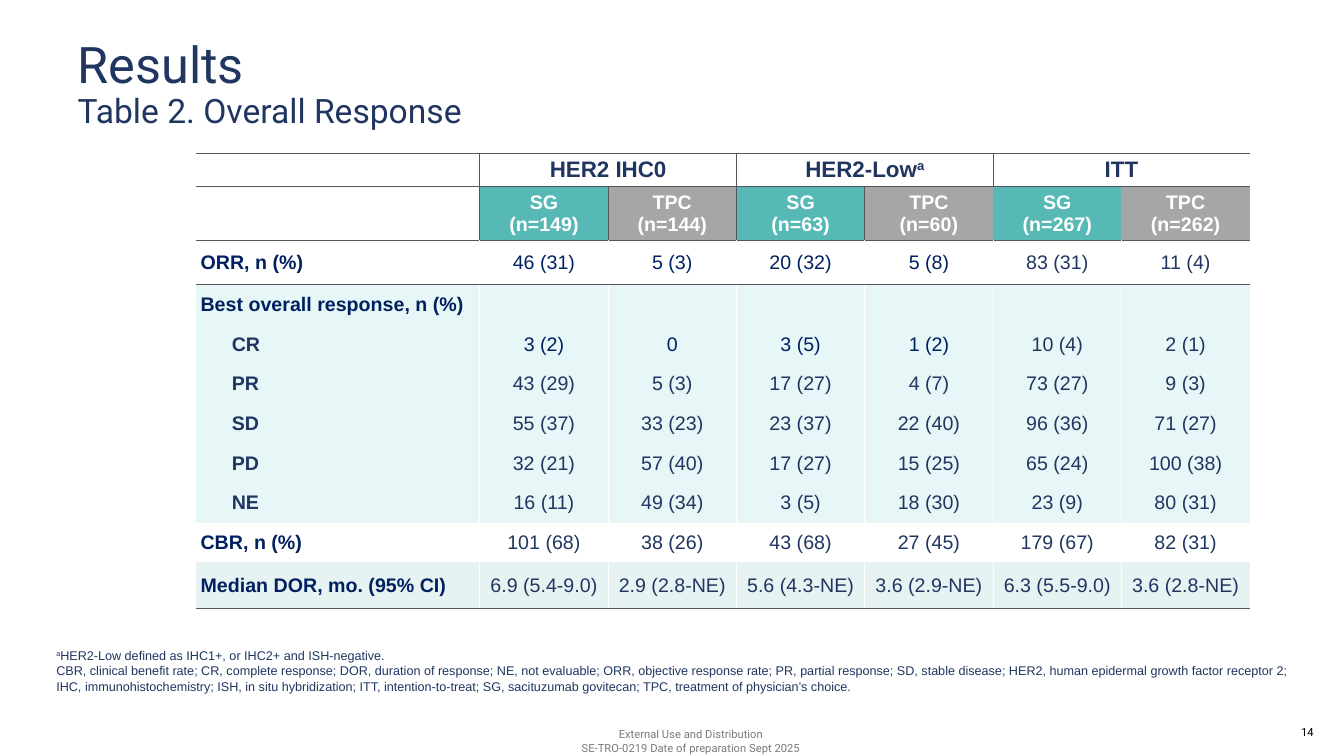
from pptx import Presentation
from pptx.dml.color import RGBColor
from pptx.enum.text import MSO_ANCHOR, MSO_AUTO_SIZE, PP_ALIGN
from pptx.oxml import parse_xml
from pptx.oxml.ns import nsdecls, qn
from pptx.util import Inches, Pt

SLIDE_WIDTH, SLIDE_HEIGHT = Inches(13.33), Inches(7.5)
NAVY, DEEP_BLUE, WHITE, RULE_GREY = "203661", "002060", "FFFFFF", "54565B"
TEAL, GREY, MINT, PALE_TEAL = "57B9B5", "A6A6A6", "E7F6F6", "E7F3F3"
PLAIN_TABLE_STYLE = "{2D5ABB26-0587-4C30-8999-92F81FD0307C}"

GROUPS = ["HER2 IHC0", "HER2-Low^a", "ITT"]
ARM_SIZES = [149, 144, 63, 60, 267, 262]
LABEL_COLUMN, VALUE_COLUMN = 21.15, 9.55
GROUP_ROW, ARM_ROW = 4.4, 7.2

# label, row height, fill, is a subrow, colour of the first four values, values
RESPONSES = [
    ("ORR, n (%)", 5.8, WHITE, False, DEEP_BLUE,
     ["46 (31)", "5 (3)", "20 (32)", "5 (8)", "83 (31)", "11 (4)"]),
    ("Best overall response, n (%)", 5.25, MINT, False, NAVY, [""] * 6),
    ("CR", 5.25, MINT, True, DEEP_BLUE,
     ["3 (2)", "0", "3 (5)", "1 (2)", "10 (4)", "2 (1)"]),
    ("PR", 5.25, MINT, True, NAVY,
     ["43 (29)", "5 (3)", "17 (27)", "4 (7)", "73 (27)", "9 (3)"]),
    ("SD", 5.25, MINT, True, NAVY,
     ["55 (37)", "33 (23)", "23 (37)", "22 (40)", "96 (36)", "71 (27)"]),
    ("PD", 5.25, MINT, True, NAVY,
     ["32 (21)", "57 (40)", "17 (27)", "15 (25)", "65 (24)", "100 (38)"]),
    ("NE", 5.25, MINT, True, NAVY,
     ["16 (11)", "49 (34)", "3 (5)", "18 (30)", "23 (9)", "80 (31)"]),
    ("CBR, n (%)", 5.25, WHITE, False, NAVY,
     ["101 (68)", "38 (26)", "43 (68)", "27 (45)", "179 (67)", "82 (31)"]),
    ("Median DOR, mo. (95% CI)", 6.1, PALE_TEAL, False, NAVY,
     ["6.9 (5.4-9.0)", "2.9 (2.8-NE)", "5.6 (4.3-NE)", "3.6 (2.9-NE)",
      "6.3 (5.5-9.0)", "3.6 (2.8-NE)"]),
]

FOOTNOTES = [
    "^aHER2-Low defined as IHC1+, or IHC2+ and ISH-negative.",
    "CBR, clinical benefit rate; CR, complete response; DOR, duration of response; "
    "NE, not evaluable; ORR, objective response rate; PR, partial response; "
    "SD, stable disease; HER2, human epidermal growth factor receptor 2; "
    "IHC, immunohistochemistry; ISH, in situ hybridization; ITT, intention-to-treat; "
    "SG, sacituzumab govitecan; TPC, treatment of physician’s choice.",
]


def across(percent):
    """Return a share of the slide width."""
    return round(SLIDE_WIDTH * percent / 100)


def down(percent):
    """Return a share of the slide height."""
    return round(SLIDE_HEIGHT * percent / 100)


def box(left, top, width, height):
    """Return a position and size from shares of the slide."""
    return across(left), down(top), across(width), down(height)


def hex_colour(value):
    """Turn a hex string into a colour."""
    return RGBColor.from_string(value)


def apply_format(target, values):
    """Set each named attribute of the target."""
    for name, value in values.items():
        setattr(target, name, value)


def add_run(paragraph, text, colour, **values):
    """Add one formatted run to a paragraph."""
    run = paragraph.add_run()
    run.text = text
    apply_format(run.font, values)
    run.font.color.rgb = hex_colour(colour)
    return run


def write_text(paragraph, text, colour, **values):
    """Write text in which a caret raises the next letter and a newline breaks the line."""
    for number, line in enumerate(text.split("\n")):
        if number:
            paragraph.add_line_break()
        before, caret, after = line.partition("^")
        if before:
            add_run(paragraph, before, colour, **values)
        if caret:
            raised = add_run(paragraph, after[0], colour, **values)
            raised.font._element.set("baseline", "30000")
            if after[1:]:
                add_run(paragraph, after[1:], colour, **values)


def add_text_box(slide, place, lines, colour, alignment, anchor, **values):
    """Add a wrapped text box with one paragraph for each line."""
    frame = slide.shapes.add_textbox(*place).text_frame
    apply_format(frame, {"word_wrap": True, "vertical_anchor": anchor})
    for number, line in enumerate(lines):
        paragraph = frame.add_paragraph() if number else frame.paragraphs[0]
        paragraph.alignment = alignment
        write_text(paragraph, line, colour, **values)


def add_title(slide):
    """Place and fill the title."""
    title = slide.shapes.title
    place = zip(("left", "top", "width", "height"), box(5.03, 2, 89.63, 16))
    apply_format(title, dict(place))
    apply_format(title.text_frame, {"word_wrap": True, "auto_size": MSO_AUTO_SIZE.NONE,
                                    "vertical_anchor": MSO_ANCHOR.BOTTOM})
    paragraph = title.text_frame.paragraphs[0]
    apply_format(paragraph, {"alignment": PP_ALIGN.LEFT, "line_spacing": 0.9})
    add_run(paragraph, "Results", NAVY, name="Roboto", size=Pt(36))
    paragraph.add_line_break()
    add_run(paragraph, "Table 2. Overall Response", NAVY, name="Roboto", size=Pt(24))


def style_cell(cell, fill, borders):
    """Set the margins, borders and fill of a cell."""
    apply_format(cell, {"margin_left": Inches(0.05), "margin_right": Inches(0.05),
                        "margin_top": 0, "margin_bottom": 0,
                        "vertical_anchor": MSO_ANCHOR.MIDDLE})
    properties = cell._tc.get_or_add_tcPr()
    for side in "LRTB":
        if side in borders:
            properties.append(parse_xml(
                f'<a:ln{side} {nsdecls("a")} w="12700"><a:solidFill>'
                f'<a:srgbClr val="{borders[side]}"/></a:solidFill></a:ln{side}>'))
    cell.fill.solid()
    cell.fill.fore_color.rgb = hex_colour(fill)


def write_cell(cell, text, colour, alignment=PP_ALIGN.CENTER, size=14, bold=True):
    """Write one line of Arial text in a cell."""
    paragraph = cell.text_frame.paragraphs[0]
    paragraph.alignment = alignment
    if text:
        write_text(paragraph, text, colour, name="Arial", size=Pt(size), bold=bold)
    return paragraph


def cell_borders(row, column, last_row):
    """Return the border colours of a cell by its place in the table."""
    borders = {}
    if row < 2:
        borders = {"T": RULE_GREY, "B": RULE_GREY}
    elif row == 2:
        borders["T"] = RULE_GREY
    elif row == last_row:
        borders["B"] = RULE_GREY
    grey_edges = {0: (1, 3, 5), 1: (1, 3)}.get(row, ())
    for side, edge in (("L", column), ("R", column + 1)):
        if edge in grey_edges:
            borders[side] = RULE_GREY
        elif row > 1 and 0 < edge < 7:
            borders[side] = WHITE
    return borders


def add_response_table(slide):
    """Add the table of responses by group and treatment arm."""
    heights = [GROUP_ROW, ARM_ROW] + [response[1] for response in RESPONSES]
    widths = [LABEL_COLUMN] + [VALUE_COLUMN] * len(ARM_SIZES)
    place = box(14.55, 20.27, sum(widths), sum(heights))
    table = slide.shapes.add_table(len(heights), len(widths), *place).table
    apply_format(table, {"first_row": False, "horz_banding": False})
    table._tbl.tblPr.find(qn("a:tableStyleId")).text = PLAIN_TABLE_STYLE
    for column, width in zip(table.columns, widths):
        column.width = across(width)
    fills = [[WHITE] * 7, [WHITE] + [TEAL, GREY] * 3]
    fills += [[response[2]] * 7 for response in RESPONSES]
    for row, height in enumerate(heights):
        table.rows[row].height = down(height)
        for column in range(len(widths)):
            style_cell(table.cell(row, column), fills[row][column],
                       cell_borders(row, column, len(heights) - 1))
    for number, group in enumerate(GROUPS):
        first = table.cell(0, 1 + 2 * number)
        first.merge(table.cell(0, 2 + 2 * number))
        write_cell(first, group, NAVY, size=16)
    for number, size in enumerate(ARM_SIZES):
        arm = ("SG", "TPC")[number % 2]
        write_cell(table.cell(1, number + 1), f"{arm}\n(n={size})", WHITE)
    for row, (label, _, _, subrow, colour, values) in enumerate(RESPONSES, 2):
        cell = table.cell(row, 0)
        paragraph = write_cell(cell, label, NAVY if subrow else DEEP_BLUE, PP_ALIGN.LEFT)
        if subrow:
            cell.margin_left = Inches(0.1)
            paragraph._p.get_or_add_pPr().set("marL", str(Inches(0.26)))
        for column, value in enumerate(values, 1):
            write_cell(table.cell(row, column), value,
                       colour if column < 5 else NAVY, bold=False)


def main():
    """Build and save the slide."""
    presentation = Presentation()
    apply_format(presentation, {"slide_width": SLIDE_WIDTH, "slide_height": SLIDE_HEIGHT})
    slide = presentation.slides.add_slide(presentation.slide_layouts[5])
    add_title(slide)
    add_response_table(slide)
    add_text_box(slide, box(3.45, 82.67, 93.08, 9.73), FOOTNOTES, NAVY,
                 PP_ALIGN.LEFT, MSO_ANCHOR.BOTTOM, name="Arial", size=Pt(9))
    add_text_box(slide, box(38.55, 95.87, 25.73, 4.27),
                 ["External Use and Distribution", "SE-TRO-0219 Date of preparation Sept 2025"],
                 "787A7E", PP_ALIGN.CENTER, MSO_ANCHOR.MIDDLE, name="Roboto", size=Pt(8))
    add_text_box(slide, box(75.15, 94.13, 23.33, 5.33), ["14"], "000000",
                 PP_ALIGN.RIGHT, MSO_ANCHOR.MIDDLE, name="Roboto", size=Pt(8))
    presentation.save("out.pptx")


if __name__ == "__main__":
    main()
